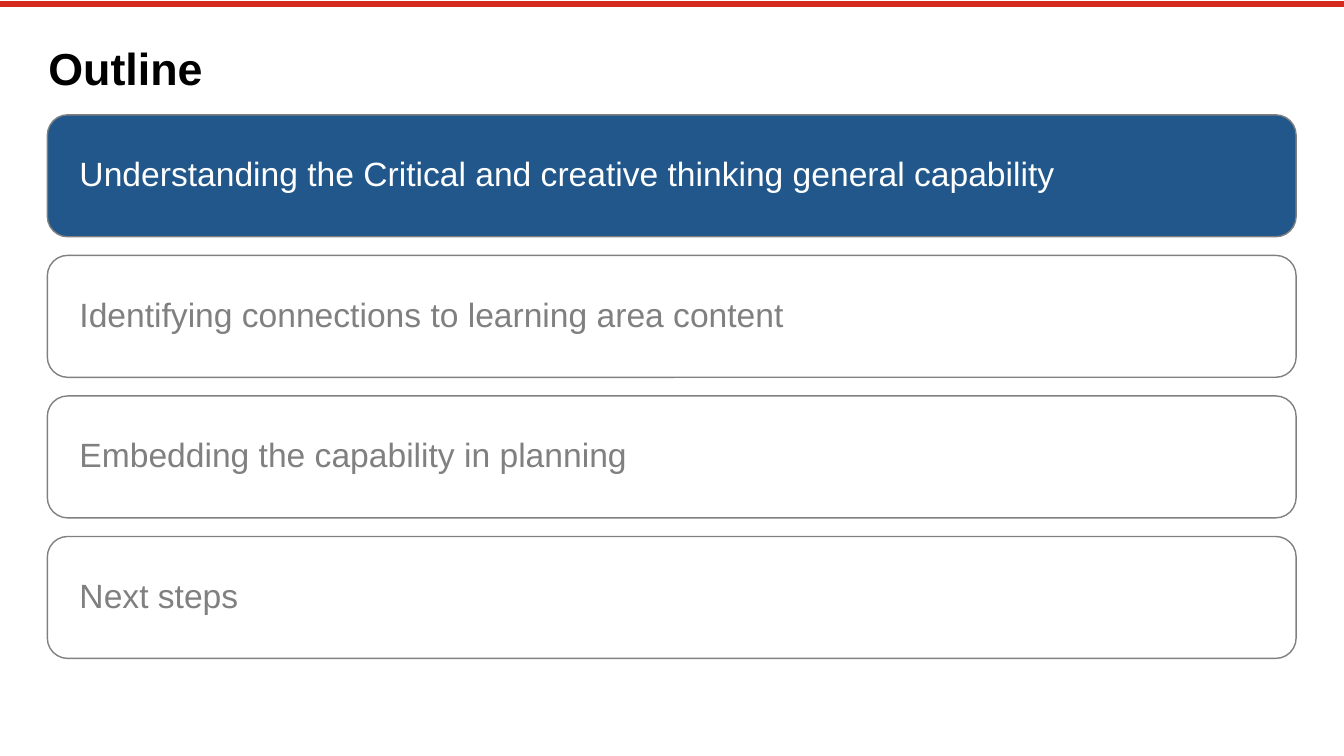
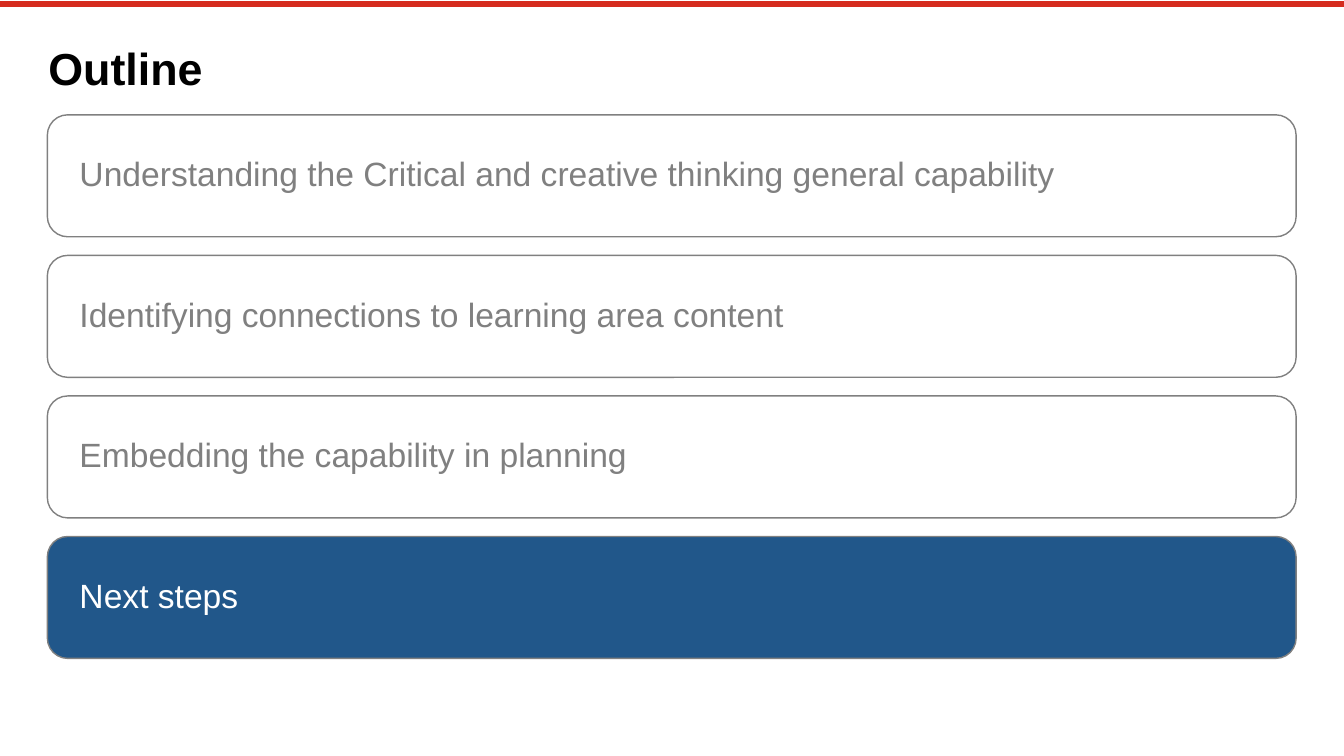
from dataclasses import dataclass

from lxml.etree import SubElement
from pptx import Presentation
from pptx.dml.color import RGBColor
from pptx.enum.shapes import MSO_CONNECTOR, MSO_SHAPE
from pptx.enum.text import MSO_ANCHOR, MSO_AUTO_SIZE, PP_ALIGN
from pptx.oxml.ns import qn
from pptx.slide import Slide
from pptx.text.text import TextFrame
from pptx.util import Pt

COLORS = {
    "rule": "D52B1E",
    "active": "21578A",
    "muted": "808080",
    "paper": "FFFFFF",
    "ink": "000000",
}
FONT = "Arial"
PAGE_WIDTH, PAGE_HEIGHT = 960, 540
TITLE_ONLY = 5

# Outline bars: equal heights at a constant pitch
BAR_LEFT, BAR_TOP, BAR_WIDTH, BAR_HEIGHT = 33.84, 82, 892, 87.1
BAR_GAP = 13.3

TOPICS = (
    "Understanding the Critical and creative thinking general capability",
    "Identifying connections to learning area content",
    "Embedding the capability in planning",
    "Next steps",
)


@dataclass(frozen=True)
class TextStyle:
    size: float
    color: str
    bold: bool
    anchor: MSO_ANCHOR
    insets: tuple[float, float, float, float]  # left, top, right, bottom
    line_spacing: float = 1.0


@dataclass(frozen=True)
class BarStyle:
    fill: str
    text: TextStyle


def bar_style(fill: str, text_color: str) -> BarStyle:
    return BarStyle(fill, TextStyle(24, text_color, False, MSO_ANCHOR.MIDDLE,
                                    (18.72, 11.5, 11.5, 11.5), 0.9))


TITLE = TextStyle(32, "ink", True, MSO_ANCHOR.TOP, (0, 0, 0, 0))
ACTIVE_BAR = bar_style("active", "paper")
IDLE_BAR = bar_style("paper", "muted")


def rgb(name: str) -> RGBColor:
    return RGBColor.from_string(COLORS[name])


def set_all(target: object, values: dict) -> None:
    for name, value in values.items():
        setattr(target, name, value)


def write(frame: TextFrame, text: str, style: TextStyle) -> None:
    left, top, right, bottom = map(Pt, style.insets)
    set_all(frame, {
        "text": text, "word_wrap": True, "auto_size": MSO_AUTO_SIZE.NONE,
        "vertical_anchor": style.anchor,
        "margin_left": left, "margin_top": top,
        "margin_right": right, "margin_bottom": bottom,
    })
    para = frame.paragraphs[0]
    set_all(para, {"alignment": PP_ALIGN.LEFT, "space_before": Pt(0),
                   "line_spacing": style.line_spacing})
    span = para.runs[0]
    set_all(span.font, {"name": FONT, "size": Pt(style.size), "bold": style.bold})
    span.font.color.rgb = rgb(style.color)


def add_top_rule(page: Slide) -> None:
    rule = page.shapes.add_connector(MSO_CONNECTOR.STRAIGHT, Pt(0), Pt(2.88),
                                     Pt(PAGE_WIDTH), Pt(2.88))
    rule.line.width = Pt(4.2)
    rule.line.color.rgb = rgb("rule")
    SubElement(rule.element.spPr, qn("a:effectLst"))


def add_title(page: Slide, text: str) -> None:
    title = page.shapes.title
    set_all(title, {"left": Pt(34.56), "top": Pt(28.8),
                    "width": Pt(BAR_WIDTH), "height": Pt(37.44)})
    write(title.text_frame, text, TITLE)


def add_bar(page: Slide, row: int, text: str, style: BarStyle) -> None:
    top = BAR_TOP + row * (BAR_HEIGHT + BAR_GAP)
    box = page.shapes.add_shape(MSO_SHAPE.ROUNDED_RECTANGLE, Pt(BAR_LEFT), Pt(top),
                                Pt(BAR_WIDTH), Pt(BAR_HEIGHT))
    box.shadow.inherit = False
    box.fill.solid()
    box.fill.fore_color.rgb = rgb(style.fill)
    box.line.width = Pt(1)
    box.line.color.rgb = rgb("muted")
    write(box.text_frame, text, style.text)


def add_outline(deck, active_row: int) -> None:
    page = deck.slides.add_slide(deck.slide_layouts[TITLE_ONLY])
    add_top_rule(page)
    add_title(page, "Outline")
    for row, topic in enumerate(TOPICS):
        add_bar(page, row, topic, ACTIVE_BAR if row == active_row else IDLE_BAR)


def main() -> None:
    deck = Presentation()
    set_all(deck, {"slide_width": Pt(PAGE_WIDTH), "slide_height": Pt(PAGE_HEIGHT)})
    # One outline page per highlighted topic: the first and the last
    for active_row in (0, len(TOPICS) - 1):
        add_outline(deck, active_row)
    deck.save("out.pptx")


if __name__ == "__main__":
    main()
